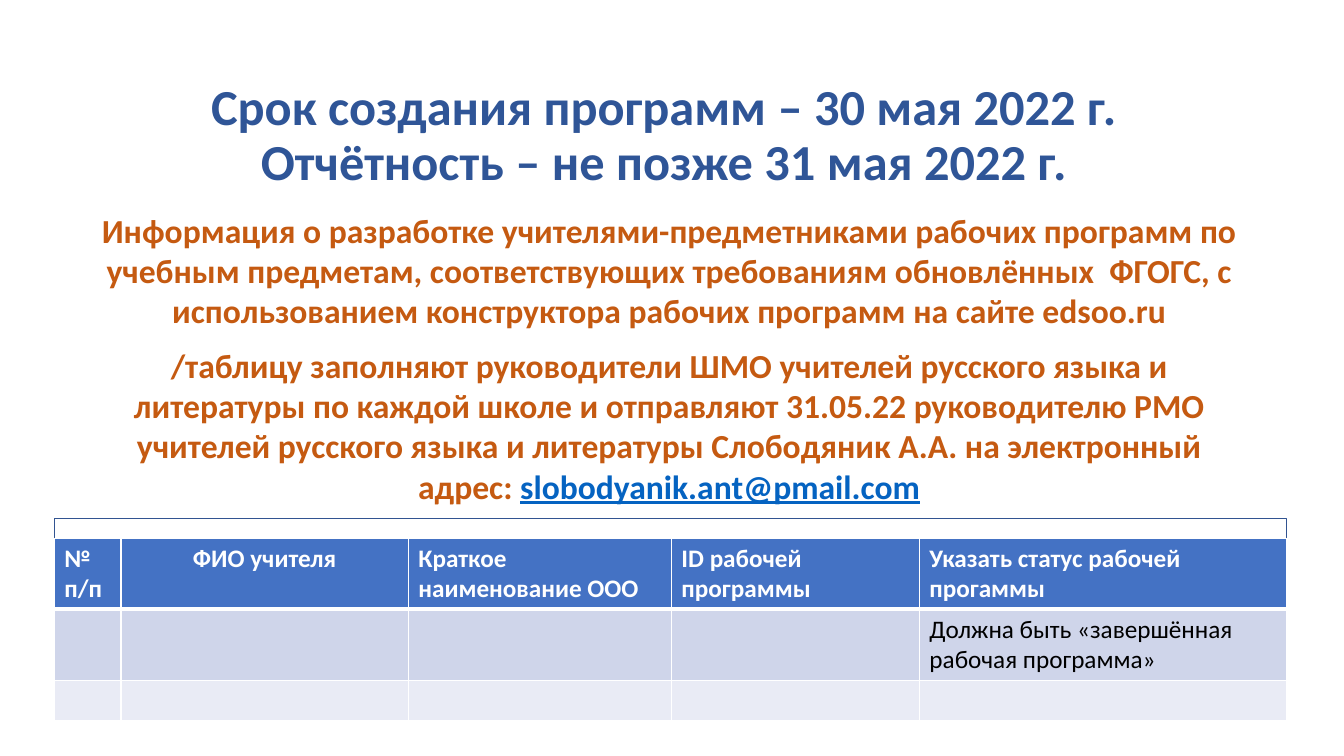
from dataclasses import dataclass

from lxml import etree
from pptx import Presentation
from pptx.dml.color import RGBColor
from pptx.enum.shapes import MSO_SHAPE
from pptx.enum.text import MSO_ANCHOR, PP_ALIGN
from pptx.oxml.ns import qn
from pptx.util import Cm, Pt

CENTER, LEFT = PP_ALIGN.CENTER, PP_ALIGN.LEFT
TOP, MIDDLE = MSO_ANCHOR.TOP, MSO_ANCHOR.MIDDLE
RECTANGLE = MSO_SHAPE.RECTANGLE


@dataclass(frozen=True)
class Theme:
    font: str = "Calibri"
    title: str = "2F5597"
    body: str = "C55A11"
    link: str = "0563C1"
    frame: str = "325491"
    header: str = "4472C4"
    bands: tuple = ("CFD5EA", "E9EBF5")
    white: str = "FFFFFF"
    black: str = "000000"
    title_size: int = 36
    body_size: int = 24
    table_size: int = 18


THEME = Theme()

TITLE = "Срок создания программ – 30 мая 2022 г.\vОтчётность – не позже 31 мая 2022 г."
BODY = [
    "Информация о разработке учителями-предметниками рабочих программ по учебным "
    "предметам, соответствующих требованиям обновлённых  ФГОГС, с использованием "
    "конструктора рабочих программ на сайте edsoo.ru",
    "/таблицу заполняют руководители ШМО учителей русского языка и литературы по "
    "каждой школе и отправляют 31.05.22 руководителю РМО учителей русского языка и "
    "литературы Слободяник А.А. на электронный адрес: ",
]
EMAIL = "slobodyanik.ant@pmail.com"
ROWS = [
    ["№\nп/п", "ФИО учителя", "Краткое наименование ООО", "ID рабочей программы",
     "Указать статус рабочей прогаммы"],
    ["", "", "", "", "Должна быть «завершённая рабочая программа»"],
    ["", "", "", "", ""],
]
COL_WIDTHS = [1.68, 7.24, 6.63, 6.25, 9.25]
ROW_HEIGHTS = [1.79, 1.79, 1.03]


def style_runs(p, size, color, bold=True):
    for r in p.runs:
        r.font.name = THEME.font
        r.font.size = Pt(size)
        r.font.bold = bold
        r.font.color.rgb = RGBColor.from_string(color)


def add_text_frame(s, box, anchor):
    tf = s.shapes.add_textbox(*map(Cm, box)).text_frame
    tf.word_wrap = True
    tf.vertical_anchor = anchor
    return tf


def set_borders(cell, bottom):
    tc_pr = cell._tc.get_or_add_tcPr()
    widths = {"a:lnL": 1, "a:lnR": 1, "a:lnT": 1, "a:lnB": bottom}
    for i, (tag, width) in enumerate(widths.items()):
        ln = etree.Element(qn(tag), w=str(Pt(width)))
        fill = etree.SubElement(ln, qn("a:solidFill"))
        etree.SubElement(fill, qn("a:srgbClr"), val=THEME.white)
        tc_pr.insert(i, ln)


# Title with the deadlines
def add_title(s, box):
    p = add_text_frame(s, box, MIDDLE).paragraphs[0]
    p.text = TITLE
    p.alignment = CENTER
    p.line_spacing = 0.9
    style_runs(p, THEME.title_size, THEME.title)


# Instructions ending in the e-mail address
def add_body(s, box):
    tf = add_text_frame(s, box, TOP)
    tf.text = "\n".join(BODY)
    for i, p in enumerate(tf.paragraphs):
        p.alignment = CENTER
        if i:
            p.space_before = Pt(10)
        style_runs(p, THEME.body_size, THEME.body)
    r = p.add_run()
    r.text = EMAIL
    style_runs(p, THEME.body_size, THEME.body)
    r.font.color.rgb = RGBColor.from_string(THEME.link)
    r.font.underline = True


# Report form: a frame with the table set slightly lower
def add_report(s, box):
    left, top, width, height = box
    frame = s.shapes.add_shape(RECTANGLE, *map(Cm, box))
    frame.shadow.inherit = False
    frame.fill.solid()
    frame.fill.fore_color.rgb = RGBColor.from_string(THEME.white)
    frame.line.color.rgb = RGBColor.from_string(THEME.frame)
    frame.line.width = Pt(1)

    table = s.shapes.add_table(len(ROWS), len(COL_WIDTHS), Cm(left), Cm(top + 0.5),
                               Cm(width), Cm(sum(ROW_HEIGHTS))).table
    for col, w in zip(table.columns, COL_WIDTHS):
        col.width = Cm(w)
    for i, (row, h) in enumerate(zip(table.rows, ROW_HEIGHTS)):
        row.height = Cm(h)
        is_header = i == 0
        fill = THEME.header if is_header else THEME.bands[i - 1]
        color = THEME.white if is_header else THEME.black
        for j, cell in enumerate(row.cells):
            cell.text = ROWS[i][j]
            cell.fill.solid()
            cell.fill.fore_color.rgb = RGBColor.from_string(fill)
            set_borders(cell, 3 if is_header else 1)
            for p in cell.text_frame.paragraphs:
                p.alignment = CENTER if is_header and j == 1 else LEFT
                style_runs(p, THEME.table_size, color, is_header)


def main():
    prs = Presentation()
    prs.slide_width, prs.slide_height = Cm(33.87), Cm(19.05)
    s = prs.slides.add_slide(prs.slide_layouts[6])
    add_title(s, (2.13, 1.93, 29.21, 3.02))
    add_body(s, (2.26, 5.16, 29.21, 12.09))
    add_report(s, (1.37, 13.06, 31.05, 4.11))
    prs.save("out.pptx")


if __name__ == "__main__":
    main()
